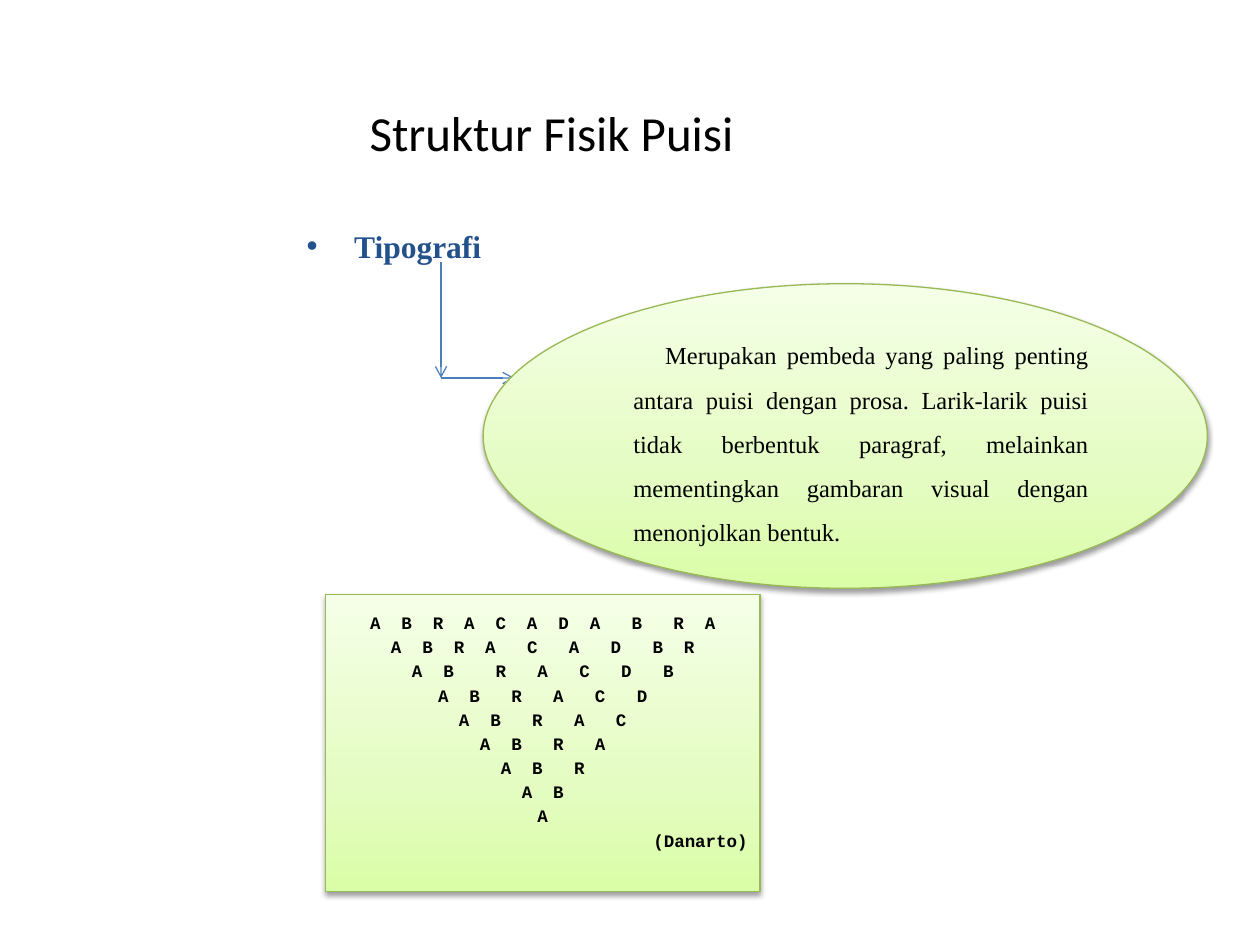
from copy import deepcopy
from dataclasses import dataclass

from lxml.etree import SubElement
from pptx import Presentation
from pptx.dml.color import RGBColor
from pptx.enum.shapes import MSO_CONNECTOR as Connector, MSO_SHAPE as Shape
from pptx.enum.text import MSO_ANCHOR as Anchor, PP_ALIGN as Align
from pptx.oxml.ns import qn
from pptx.util import Cm, Pt


@dataclass(frozen=True)
class Theme:
    ink: str = "000000"
    heading: str = "23518B"
    arrow: str = "4B7EBC"
    border: str = "98B955"
    gradient: tuple = ((0, "DAFDA7"), (0.35, "E4FCC2"), (1, "F5FFE7"))
    sans: str = "Calibri"
    serif: str = "Times New Roman"
    mono: str = "Courier New"
    title_size: float = 28
    heading_size: float = 18
    body_size: float = 14
    poem_size: float = 10
    line_width: float = 0.75


THEME = Theme()

# Content
TITLE = "Struktur Fisik Puisi"
HEADING = "Tipografi"
DEFINITION = (
    "Merupakan pembeda yang paling penting antara puisi dengan prosa. "
    "Larik-larik puisi tidak berbentuk paragraf, melainkan mementingkan "
    "gambaran visual dengan menonjolkan bentuk."
)
POEM = [
    "A  B  R  A  C  A  D  A   B   R  A",
    "A  B  R  A   C   A   D   B  R",
    "A  B    R   A   C   D   B",
    "A  B   R   A   C   D",
    "A  B   R   A   C",
    "A  B   R   A",
    "A  B   R",
    "A  B",
    "A",
]
POET = "(Danarto)"

# Places in centimetres: left, top, width, height
TITLE_AREA = (7.2, 1.6, 17.4, 2.13)
HEADING_AREA = (5.93, 4.45, 18.63, 14.2)
ELLIPSE_AREA = (9.74, 5.72, 14.6, 6.14)
POEM_AREA = (6.56, 11.99, 8.76, 5.99)
ARROW_PATH = [(8.89, 5.29), (8.89, 7.62), (10.37, 7.62)]


def write(frame, text, *, font, size, color=THEME.ink, bold=False,
          align=Align.LEFT, spacing=None, margin=0, indent=0, bullet=None):
    """Add one formatted paragraph, filling the first one if it is empty."""
    para = frame.paragraphs[0]
    if para.runs:
        para = frame.add_paragraph()
    para.alignment = align
    if spacing:
        para.line_spacing = spacing
    props = para._p.get_or_add_pPr()
    props.set("marL", str(Cm(margin)))
    props.set("indent", str(Cm(indent)))
    if bullet:
        SubElement(props, qn("a:buFont"), typeface="Arial")
        SubElement(props, qn("a:buChar"), char=bullet)
    span = para.add_run()
    span.text = text
    span.font.name, span.font.size, span.font.bold = font, Pt(size), bold
    span.font.color.rgb = RGBColor.from_string(color)


def add_text_box(page, area, anchor):
    frame = page.shapes.add_textbox(*map(Cm, area)).text_frame
    frame.word_wrap = True
    frame.vertical_anchor = anchor
    return frame


def set_line(line):
    line.width = Pt(THEME.line_width)


def add_panel(page, kind, area):
    """Add a green gradient shape with a soft shadow; return its text frame."""
    panel = page.shapes.add_shape(kind, *map(Cm, area))
    panel.fill.gradient()
    stops = panel._element.spPr.find(qn("a:gradFill")).find(qn("a:gsLst"))
    stops.append(deepcopy(stops[-1]))
    for stop, (position, color) in zip(panel.fill.gradient_stops, THEME.gradient):
        stop.position = position
        stop.color.rgb = RGBColor.from_string(color)
    panel.fill.gradient_angle = 90
    panel.line.color.rgb = RGBColor.from_string(THEME.border)
    set_line(panel.line)

    panel.shadow.inherit = False
    effects = panel._element.spPr.find(qn("a:effectLst"))
    shadow = SubElement(effects, qn("a:outerShdw"), blurRad=str(Pt(3.1)),
                        dist=str(Pt(1.6)), dir="5400000", rotWithShape="0")
    black = SubElement(shadow, qn("a:srgbClr"), val="000000")
    SubElement(black, qn("a:alpha"), val="38000")

    frame = panel.text_frame
    frame.word_wrap = True
    frame.vertical_anchor = Anchor.MIDDLE
    return frame


def add_arrow(page, start, end):
    arrow = page.shapes.add_connector(Connector.STRAIGHT, *map(Cm, start + end))
    arrow.line.color.rgb = RGBColor.from_string(THEME.arrow)
    set_line(arrow.line)
    SubElement(arrow.line._get_or_add_ln(), qn("a:tailEnd"), type="arrow")
    SubElement(arrow._element.spPr, qn("a:effectLst"))


def main():
    deck = Presentation()
    deck.slide_width, deck.slide_height = Cm(25.4), Cm(19.05)
    page = deck.slides.add_slide(deck.slide_layouts[6])

    # Title and heading
    write(add_text_box(page, TITLE_AREA, Anchor.MIDDLE), TITLE,
          font=THEME.sans, size=THEME.title_size)
    write(add_text_box(page, HEADING_AREA, Anchor.TOP), HEADING,
          font=THEME.serif, size=THEME.heading_size, color=THEME.heading,
          bold=True, margin=0.96, indent=-0.96, bullet="•")

    # Arrows from the heading to the definition
    for start, end in zip(ARROW_PATH, ARROW_PATH[1:]):
        add_arrow(page, start, end)

    # Definition
    write(add_panel(page, Shape.OVAL, ELLIPSE_AREA), DEFINITION,
          font=THEME.serif, size=THEME.body_size, align=Align.JUSTIFY,
          spacing=1.5, margin=0.64, indent=0.64)

    # Poem, with the poet's name at the right
    poem = add_panel(page, Shape.RECTANGLE, POEM_AREA)
    poem.margin_bottom = Cm(0.67)
    lines = [(line, Align.CENTER) for line in POEM] + [(POET, Align.RIGHT)]
    for line, align in lines:
        write(poem, line, font=THEME.mono, size=THEME.poem_size, bold=True,
              align=align, spacing=1.15)

    deck.save("out.pptx")


if __name__ == "__main__":
    main()
